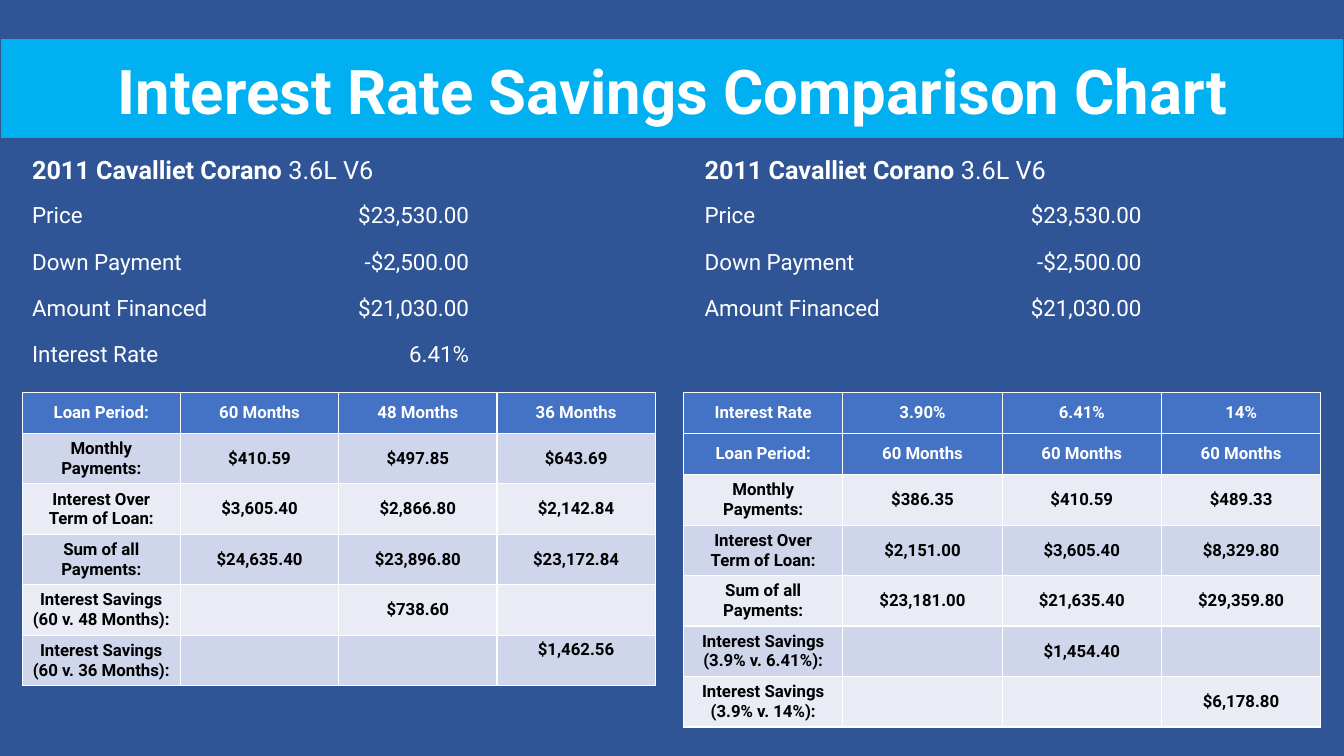
from pptx import Presentation
from pptx.dml.color import RGBColor
from pptx.enum.shapes import MSO_SHAPE
from pptx.enum.text import MSO_ANCHOR, MSO_AUTO_SIZE, PP_ALIGN
from pptx.util import Inches, Pt

FONT = "Roboto"
COLORS = {
    "background": "2F5597",
    "banner": "00B0F0",
    "banner_line": "325491",
    "header": "4472C4",
    "odd_band": "CFD5EA",
    "even_band": "E9EBF5",
    "white": "FFFFFF",
    "black": "000000",
}
DETAIL_TOP, DETAIL_STEP = 1.95, 0.46
TABLE_TOP, HEADER_HEIGHT, ROW_HEIGHT = 3.89, 0.41, 0.5

PRICING = [
    ("Price", "$23,530.00"),
    ("Down Payment", "-$2,500.00"),
    ("Amount Financed", "$21,030.00"),
]
PERIOD_ROWS = [
    ("Loan Period:", "60 Months", "48 Months", "36 Months"),
    ("Monthly Payments:", "$410.59", "$497.85", "$643.69"),
    ("Interest Over Term of Loan:", "$3,605.40", "$2,866.80", "$2,142.84"),
    ("Sum of all Payments:", "$24,635.40", "$23,896.80", "$23,172.84"),
    ("Interest Savings (60 v. 48 Months):", "", "$738.60", ""),
    ("Interest Savings (60 v. 36 Months):", "", "", "$1,462.56"),
]
RATE_ROWS = [
    ("Interest Rate", "3.90%", "6.41%", "14%"),
    ("Loan Period:", "60 Months", "60 Months", "60 Months"),
    ("Monthly Payments:", "$386.35", "$410.59", "$489.33"),
    ("Interest Over Term of Loan:", "$2,151.00", "$3,605.40", "$8,329.80"),
    ("Sum of all Payments:", "$23,181.00", "$21,635.40", "$29,359.80"),
    ("Interest Savings (3.9% v. 6.41%):", "", "$1,454.40", ""),
    ("Interest Savings (3.9% v. 14%):", "", "", "$6,178.80"),
]


def color(name):
    return RGBColor.from_string(COLORS[name])


def add_text(paragraph, text, size=16, bold=False, text_color="white", align=PP_ALIGN.LEFT):
    """Append one formatted run to the paragraph."""
    paragraph.alignment = align
    run = paragraph.add_run()
    run.text = text
    run.font.name = FONT
    run.font.size = Pt(size)
    run.font.bold = bold
    run.font.color.rgb = color(text_color)


def add_text_box(slide, left, top, width, height):
    """Add an empty wrapping text box and return its paragraph."""
    box = slide.shapes.add_textbox(Inches(left), Inches(top), Inches(width), Inches(height))
    box.text_frame.word_wrap = True
    return box.text_frame.paragraphs[0]


def add_title(slide, text):
    """Fill the title placeholder and lay the banner behind it."""
    title = slide.shapes.title
    title.left, title.top = Inches(0.39), Inches(0.47)
    title.width, title.height = Inches(12.58), Inches(0.84)
    title.text_frame.auto_size = MSO_AUTO_SIZE.NONE
    title.text_frame.vertical_anchor = MSO_ANCHOR.MIDDLE
    add_text(title.text_frame.paragraphs[0], text, size=44, bold=True, align=PP_ALIGN.CENTER)

    banner = slide.shapes.add_shape(
        MSO_SHAPE.RECTANGLE, 0, Inches(0.38), Inches(13.33), Inches(1))
    banner.shadow.inherit = False
    banner.fill.solid()
    banner.fill.fore_color.rgb = color("banner")
    banner.line.color.rgb = color("banner_line")
    banner.line.width = Pt(1)
    title.element.addprevious(banner.element)


def add_car_details(slide, left, details):
    """Add the car's name and its label and amount pairs."""
    heading = add_text_box(slide, left, 1.48, 4.81, 0.4)
    add_text(heading, "2011 Cavalliet Corano ", size=18, bold=True)
    add_text(heading, "3.6L V6", size=18)
    for index, (label, amount) in enumerate(details):
        top = DETAIL_TOP + index * DETAIL_STEP
        add_text(add_text_box(slide, left, top, 2.78, 0.37), label)
        add_text(add_text_box(slide, left + 2.78, top, 1.75, 0.37), amount,
                 align=PP_ALIGN.RIGHT)


def add_loan_table(slide, left, column_width, rows, header_rows=1):
    """Add a banded loan table and return it."""
    columns = len(rows[0])
    heights = [HEADER_HEIGHT if index < header_rows else ROW_HEIGHT
               for index in range(len(rows))]
    table = slide.shapes.add_table(
        len(rows), columns, Inches(left), Inches(TABLE_TOP),
        Inches(column_width * columns), Inches(sum(heights))).table
    for column in table.columns:
        column.width = Inches(column_width)
    for row_index, values in enumerate(rows):
        table.rows[row_index].height = Inches(heights[row_index])
        is_header = row_index < header_rows
        band = "odd_band" if row_index % 2 else "even_band"
        for column_index, value in enumerate(values):
            cell = table.cell(row_index, column_index)
            cell.fill.solid()
            cell.fill.fore_color.rgb = color("header" if is_header else band)
            cell.vertical_anchor = MSO_ANCHOR.MIDDLE
            if value:
                add_text(cell.text_frame.paragraphs[0], value, size=12, bold=True,
                         text_color="white" if is_header else "black",
                         align=PP_ALIGN.CENTER)
    return table


def main():
    presentation = Presentation()
    presentation.slide_width = Inches(13.33)
    presentation.slide_height = Inches(7.5)
    slide = presentation.slides.add_slide(presentation.slide_layouts[5])
    slide.background.fill.solid()
    slide.background.fill.fore_color.rgb = color("background")

    add_title(slide, "Interest Rate Savings Comparison Chart")
    add_car_details(slide, 0.22, PRICING + [("Interest Rate", "6.41%")])
    add_car_details(slide, 6.89, PRICING)
    period_table = add_loan_table(slide, 0.22, 1.57, PERIOD_ROWS)
    period_table.cell(5, 3).vertical_anchor = MSO_ANCHOR.TOP
    add_loan_table(slide, 6.78, 1.58, RATE_ROWS, header_rows=2)

    presentation.save("out.pptx")


if __name__ == "__main__":
    main()
